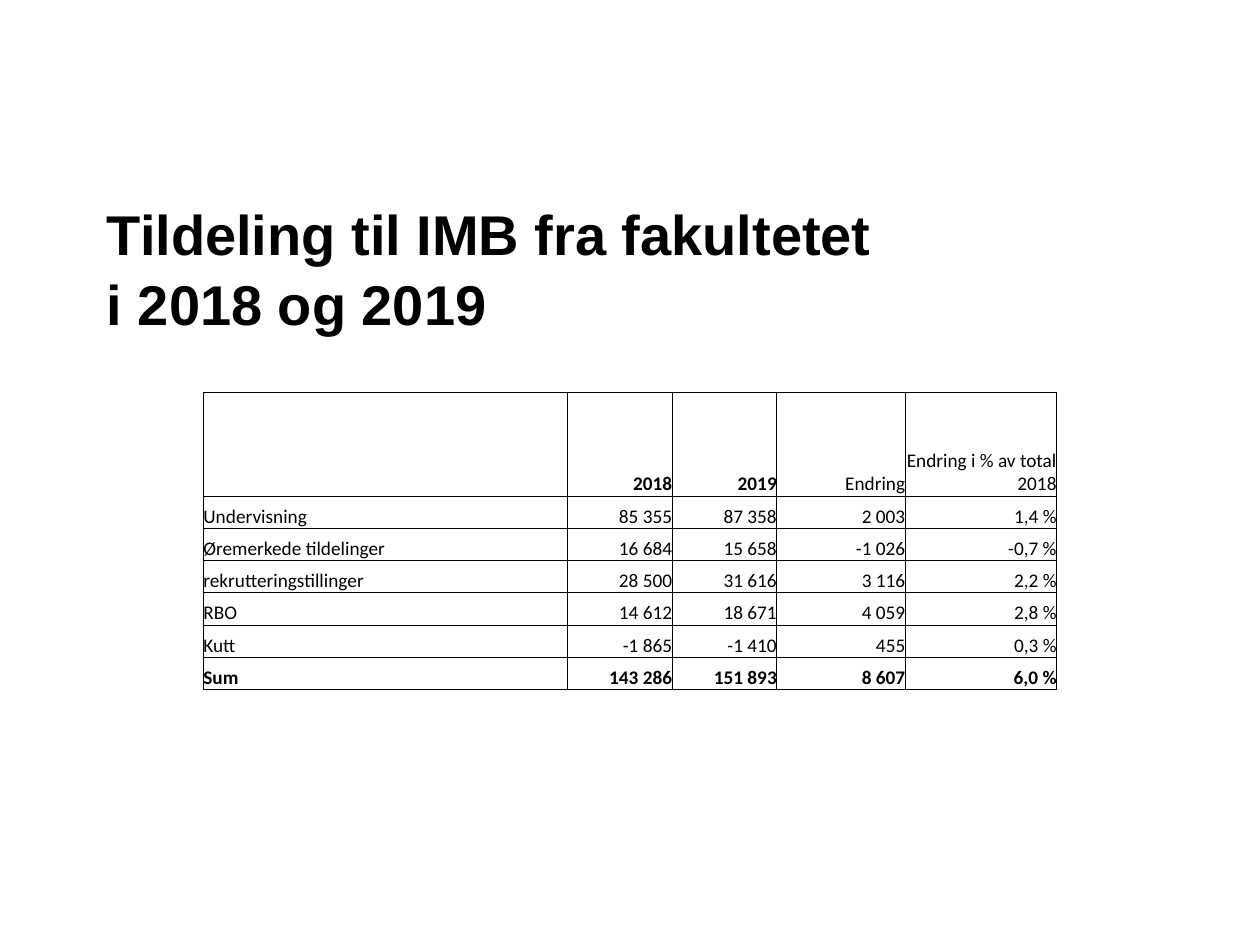
from lxml.etree import SubElement
from pptx import Presentation
from pptx.dml.color import RGBColor
from pptx.enum.text import MSO_ANCHOR, MSO_AUTO_SIZE, PP_ALIGN
from pptx.oxml.ns import qn
from pptx.util import Cm, Pt

COLORS = {"text": "000000", "border": "000000"}
COL_WIDTHS = [7.34, 2.11, 2.11, 2.59, 3.05]
ROW_HEIGHTS = [2.08] + [0.65] * 6
ROWS = [
    ["", "2018", "2019", "Endring", "Endring i % av total 2018"],
    ["Undervisning", "85 355", "87 358", "2 003", "1,4 %"],
    ["Øremerkede tildelinger", "16 684", "15 658", "-1 026", "-0,7 %"],
    ["rekrutteringstillinger", "28 500", "31 616", "3 116", "2,2 %"],
    ["RBO", "14 612", "18 671", "4 059", "2,8 %"],
    ["Kutt", "-1 865", "-1 410", "455", "0,3 %"],
    ["Sum", "143 286", "151 893", "8 607", "6,0 %"],
]


def add_run(p, text, font, size, bold):
    """Add one formatted run to a paragraph."""
    r = p.add_run()
    r.text = text
    r.font.name = font
    r.font.size = Pt(size)
    r.font.bold = bold
    r.font.color.rgb = RGBColor.from_string(COLORS["text"])


def add_borders(cell, width=0.5):
    """Draw a thin solid line on all four sides of a cell."""
    tc_pr = cell._tc.get_or_add_tcPr()
    for side in ("a:lnL", "a:lnR", "a:lnT", "a:lnB"):
        ln = SubElement(tc_pr, qn(side), w=str(Pt(width)))
        fill = SubElement(ln, qn("a:solidFill"))
        SubElement(fill, qn("a:srgbClr"), val=COLORS["border"])


def fill_cell(cell, text, align, bold):
    """Write and format one table cell."""
    cell.margin_left = cell.margin_right = 0
    cell.margin_top = cell.margin_bottom = 0
    cell.vertical_anchor = MSO_ANCHOR.BOTTOM
    add_borders(cell)
    cell.fill.background()
    if text:
        p = cell.text_frame.paragraphs[0]
        p.alignment = align
        add_run(p, text, "Calibri", 11, bold)


def place_title(s, lines, left, top, width, height):
    """Move the title placeholder into its box and write its lines."""
    sp = s.shapes.title
    sp.left, sp.top, sp.width, sp.height = Cm(left), Cm(top), Cm(width), Cm(height)
    tf = sp.text_frame
    tf.word_wrap = True
    tf.auto_size = MSO_AUTO_SIZE.NONE
    tf.vertical_anchor = MSO_ANCHOR.MIDDLE
    p = tf.paragraphs[0]
    p.alignment = PP_ALIGN.LEFT
    p.line_spacing = 1.05
    for i, line in enumerate(lines):
        if i:
            p.add_line_break()
        add_run(p, line, "Arial", 32, True)


def place_budget_table(s, left, top):
    """Build the allocation table from its top left corner."""
    table = s.shapes.add_table(
        len(ROWS), len(COL_WIDTHS), Cm(left), Cm(top),
        Cm(sum(COL_WIDTHS)), Cm(sum(ROW_HEIGHTS)),
    ).table
    table.first_row = table.horz_banding = False
    for column, width in zip(table.columns, COL_WIDTHS):
        column.width = Cm(width)
    for row, height in zip(table.rows, ROW_HEIGHTS):
        row.height = Cm(height)
    for i, values in enumerate(ROWS):
        for j, text in enumerate(values):
            align = PP_ALIGN.RIGHT if j else PP_ALIGN.LEFT
            bold = values[0] == "Sum" or (i == 0 and j < 3)
            fill_cell(table.cell(i, j), text, align, bold)


def main():
    """Create the presentation and save it."""
    prs = Presentation()
    prs.slide_width, prs.slide_height = Cm(25.4), Cm(19.05)
    s = prs.slides.add_slide(prs.slide_layouts[0])
    subtitle = s.placeholders[1].element
    subtitle.getparent().remove(subtitle)
    place_title(s, ["Tildeling til IMB fra fakultetet ", "i 2018 og 2019"],
                1.9, 3.33, 21.6, 4.09)
    place_budget_table(s, 4.1, 7.92)
    prs.save("out.pptx")


if __name__ == "__main__":
    main()
